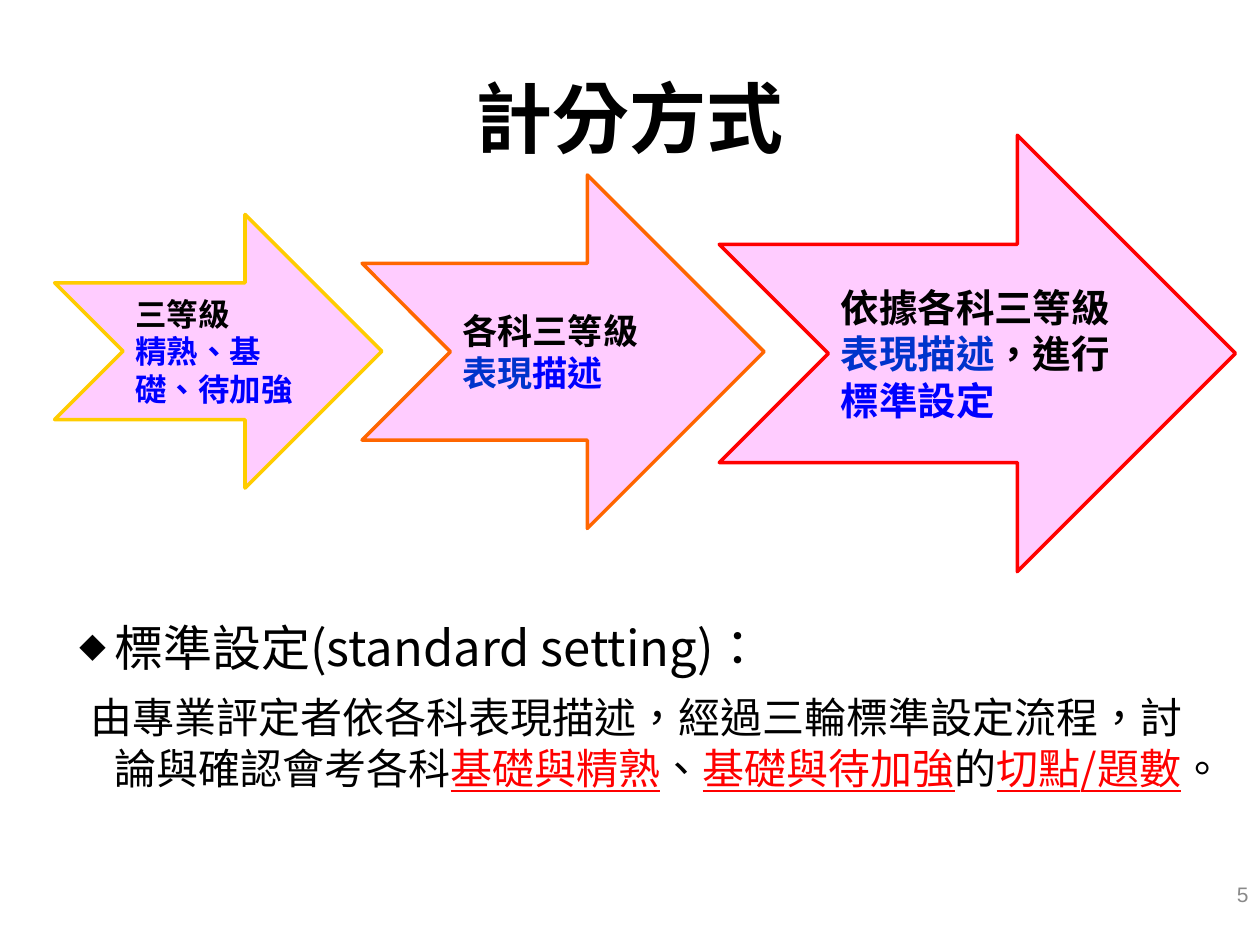
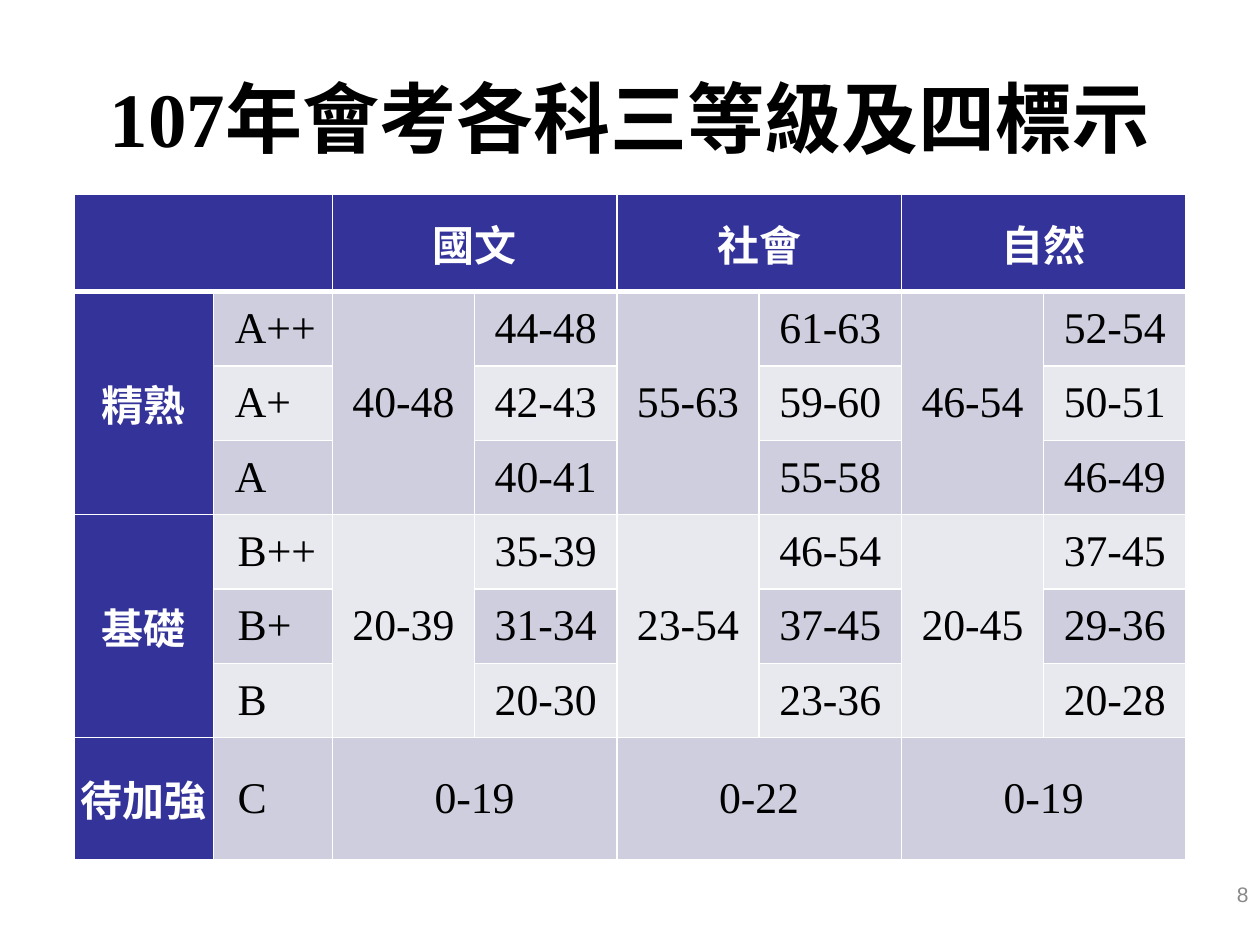
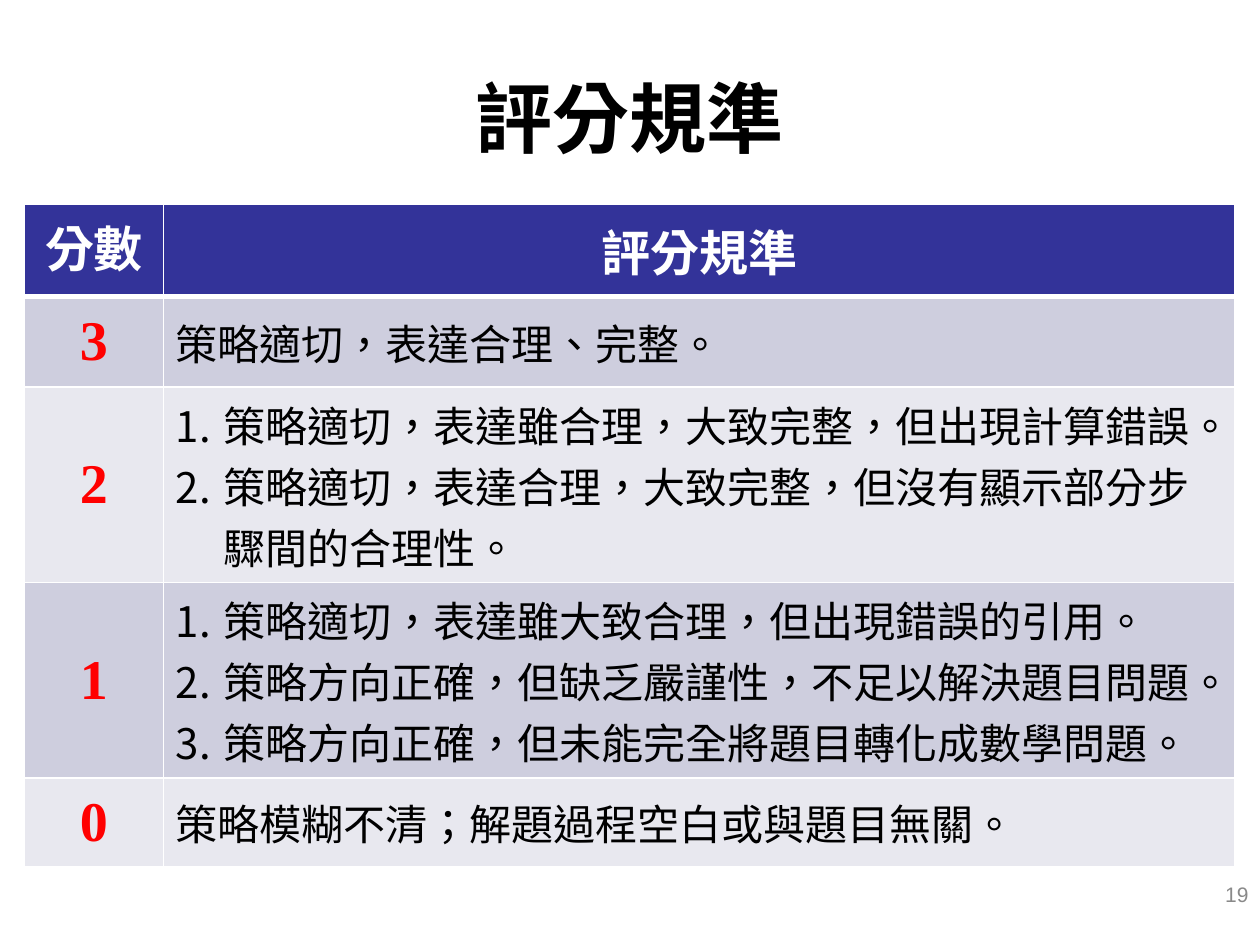
"""Builds three slides on exam scoring levels and marking criteria."""
from lxml.etree import SubElement
from pptx import Presentation
from pptx.dml.color import RGBColor
from pptx.enum.shapes import MSO_SHAPE as SHAPE
from pptx.enum.text import MSO_ANCHOR as ANCHOR, PP_ALIGN as ALIGN
from pptx.oxml.ns import qn
from pptx.util import Pt

COLORS = {
    "black": "000000", "white": "FFFFFF", "red": "FF0000", "blue": "0000FF",
    "royal": "0033CC", "pink": "FFCCFF", "yellow": "FFCC00", "orange": "FF6600",
    "navy": "333399", "band": "CECEDE", "pale": "E8E8EF", "gray": "898989",
}
CJK, SERIF, SANS = "Noto Sans CJK SC", "Times New Roman", "Arial"
TITLE_ONLY = 5


def rgb(name):
    return RGBColor.from_string(COLORS[name])


class Deck:
    def __init__(self):
        self.prs = Presentation()
        self.prs.slide_width, self.prs.slide_height = Pt(720), Pt(540)
        self.s = None

    def slide(self, title, number):
        self.s = self.prs.slides.add_slide(self.prs.slide_layouts[TITLE_ONLY])
        sp = self.s.shapes.title
        sp.left, sp.top, sp.width, sp.height = Pt(36), Pt(21.6), Pt(648), Pt(90)
        sp.text_frame.vertical_anchor = ANCHOR.MIDDLE
        self.para(sp.text_frame, title, size=44, bold=True, align=ALIGN.CENTER)
        tf = self.textbox(553, 496.4, 167.5, 29, ANCHOR.MIDDLE)
        self.para(tf, [(number, {})], size=12, color="gray", font=SANS, align=ALIGN.RIGHT)

    def textbox(self, x, y, w, h, anchor=ANCHOR.TOP):
        tf = self.s.shapes.add_textbox(Pt(x), Pt(y), Pt(w), Pt(h)).text_frame
        tf.word_wrap = True
        tf.vertical_anchor = anchor
        return tf

    def run(self, p, text, size, color="black", bold=False, font=CJK, underline=False):
        r = p.add_run()
        r.text = text
        r.font.size, r.font.bold, r.font.name = Pt(size), bold, font
        r.font.color.rgb = rgb(color)
        if underline:
            r.font.underline = True
        rPr = r._r.get_or_add_rPr()
        rPr.set("lang", "zh-TW")
        SubElement(rPr, qn("a:ea"), typeface=CJK)

    def para(self, tf, runs, align=ALIGN.LEFT, left=0, indent=0, bullet=None,
             before=0, hanging=True, **style):
        p = tf.paragraphs[0]
        if p.runs:
            p = tf.add_paragraph()
        p.alignment = align
        pPr = p._p.get_or_add_pPr()
        if left:
            pPr.set("marL", str(Pt(left)))
            pPr.set("indent", str(Pt(indent)))
        if not hanging:
            pPr.set("hangingPunct", "0")
        if bullet:
            if bullet != "1.":
                SubElement(pPr, qn("a:buSzPct"), val="55000")
            SubElement(pPr, qn("a:buFont"), typeface=CJK)
            if bullet == "1.":
                SubElement(pPr, qn("a:buAutoNum"), type="arabicPeriod")
            else:
                SubElement(pPr, qn("a:buChar"), char=bullet)
        if before:
            p.space_before = Pt(before)
        for text, changes in runs:
            self.run(p, text, **{**style, **changes})

    def arrow(self, x, y, w, h, line, size, paragraphs):
        sp = self.s.shapes.add_shape(SHAPE.NOTCHED_RIGHT_ARROW, Pt(x), Pt(y), Pt(w), Pt(h))
        sp.shadow.inherit = False
        sp.fill.solid()
        sp.fill.fore_color.rgb = rgb("pink")
        sp.line.color.rgb = rgb(line)
        sp.line.width = Pt(2)
        sp.text_frame.vertical_anchor = ANCHOR.MIDDLE
        for runs in paragraphs:
            self.para(sp.text_frame, runs, size=size, bold=True, hanging=False)

    def table(self, x, y, cols, rows, margins, head_col=False):
        tbl = self.s.shapes.add_table(len(rows), len(cols), Pt(x), Pt(y),
                                      Pt(sum(cols)), Pt(sum(rows))).table
        for col, w in zip(tbl.columns, cols):
            col.width = Pt(w)
        for i, (row, h) in enumerate(zip(tbl.rows, rows)):
            row.height = Pt(h)
            for j, cell in enumerate(row.cells):
                head = i == 0 or (head_col and j == 0)
                cell.fill.solid()
                cell.fill.fore_color.rgb = rgb("navy" if head else "band" if i % 2 else "pale")
                cell.margin_left = cell.margin_right = Pt(margins[0])
                cell.margin_top = cell.margin_bottom = Pt(margins[1])
                cell.vertical_anchor = ANCHOR.MIDDLE
                self.borders(cell, top=3 if i == 1 else 1, bottom=3 if i == 0 else 1)
        return tbl

    def borders(self, cell, top, bottom):
        tcPr = cell._tc.get_or_add_tcPr()
        for k, (side, w) in enumerate(zip("LRTB", (1, 1, top, bottom))):
            ln = SubElement(tcPr, qn(f"a:ln{side}"), w=str(Pt(w)))
            SubElement(SubElement(ln, qn("a:solidFill")), qn("a:srgbClr"), val=COLORS["white"])
            tcPr.insert(k, ln)

    def cell(self, tbl, i, j, text, align=ALIGN.CENTER, **style):
        self.para(tbl.cell(i, j).text_frame, [(text, {})], align=align, **style)


def scoring_slide(deck):
    deck.slide([("計分方式", {})], "5")
    blue, royal = {"color": "blue"}, {"color": "royal"}
    deck.arrow(31.2, 122.5, 187, 156.4, "yellow", 18,
               [[("三等級", {})], [("精熟、基礎、待加強", blue)]])
    deck.arrow(206.9, 100, 229.7, 202, "orange", 20,
               [[("各科三等級", {})], [("表現", royal), ("描述", blue)]])
    deck.arrow(411, 77.3, 295, 249.4, "red", 22,
               [[("依據各科三等級", {}), ("表現描述", royal), ("，進行", {}), ("標準設定", blue)]])
    tf = deck.textbox(31, 349.2, 657.4, 173)
    deck.para(tf, [("標準設定(standard setting)：", {})], size=28, left=27.4,
              indent=-20, bullet="◆")
    key = {"color": "red", "underline": True}
    deck.para(tf, [("由專業評定者依各科表現描述，經過三輪標準設定流程，討論與確認會考各科", {}),
                   ("基礎與精熟", key), ("、", {}), ("基礎與待加強", key), ("的", {}),
                   ("切點/題數", key), ("。", {})],
              size=24, left=27.4, indent=-13.9, before=9)


def levels_slide(deck):
    deck.slide([("107年會考各科", {"font": SERIF}), ("三等級及四標示", {})], "8")
    tbl = deck.table(42.5, 111.2, [79.4, 68] + [81.3] * 6,
                     [55.4] + [42.5] * 6 + [69.6], (1.4, 0), head_col=True)
    head = {"size": 24, "color": "white", "bold": True, "font": SANS}
    body = {"size": 25, "font": SERIF}
    tbl.cell(0, 0).merge(tbl.cell(0, 1))
    for i, name in ((1, "精熟"), (4, "基礎"), (7, "待加強")):
        deck.cell(tbl, i, 0, name, **head)
        if i < 7:
            tbl.cell(i, 0).merge(tbl.cell(i + 2, 0))
    for i, mark in enumerate(("A++", "A+", "A", "B++", "B+", "B", "C"), 1):
        deck.cell(tbl, i, 1, mark, align=ALIGN.LEFT, left=11 if i < 4 else 12.5, **body)
    subjects = [
        ("國文", ("40-48", "20-39", "0-19"),
         ("44-48", "42-43", "40-41", "35-39", "31-34", "20-30")),
        ("社會", ("55-63", "23-54", "0-22"),
         ("61-63", "59-60", "55-58", "46-54", "37-45", "23-36")),
        ("自然", ("46-54", "20-45", "0-19"),
         ("52-54", "50-51", "46-49", "37-45", "29-36", "20-28")),
    ]
    for k, (subject, totals, ranges) in enumerate(subjects):
        j = 2 + 2 * k
        deck.cell(tbl, 0, j, subject, **head)
        for i, total in zip((1, 4, 7), totals):
            deck.cell(tbl, i, j, total, **body)
        for i, scores in enumerate(ranges, 1):
            deck.cell(tbl, i, j + 1, scores, **body)
        for top, bottom, right in ((0, 0, j + 1), (1, 3, j), (4, 6, j), (7, 7, j + 1)):
            tbl.cell(top, j).merge(tbl.cell(bottom, right))


def criteria_slide(deck):
    deck.slide([("評分規準", {})], "19")
    tbl = deck.table(14.1, 116.8, [79.2, 612.4], [52.6, 51.9, 111.6, 111.6, 51], (7.2, 3.6))
    for j, name in enumerate(("分數", "評分規準")):
        deck.cell(tbl, 0, j, name, size=28, color="white", bold=True, font=SERIF)
    tbl.cell(0, 0).vertical_anchor = ANCHOR.TOP
    criteria = [
        ("3", ["策略適切，表達合理、完整。"]),
        ("2", ["策略適切，表達雖合理，大致完整，但出現計算錯誤。",
               "策略適切，表達合理，大致完整，但沒有顯示部分步驟間的合理性。"]),
        ("1", ["策略適切，表達雖大致合理，但出現錯誤的引用。",
               "策略方向正確，但缺乏嚴謹性，不足以解決題目問題。",
               "策略方向正確，但未能完全將題目轉化成數學問題。"]),
        ("0", ["策略模糊不清；解題過程空白或與題目無關。"]),
    ]
    for i, (score, rules) in enumerate(criteria, 1):
        deck.cell(tbl, i, 0, score, size=32, color="red", bold=True, font=SERIF)
        numbered = {"left": 27, "indent": -27, "bullet": "1."} if len(rules) > 1 else {}
        for rule in rules:
            deck.cell(tbl, i, 1, rule, align=ALIGN.LEFT, size=24, font=SERIF, **numbered)


def main():
    deck = Deck()
    scoring_slide(deck)
    levels_slide(deck)
    criteria_slide(deck)
    deck.prs.save("out.pptx")


if __name__ == "__main__":
    main()
